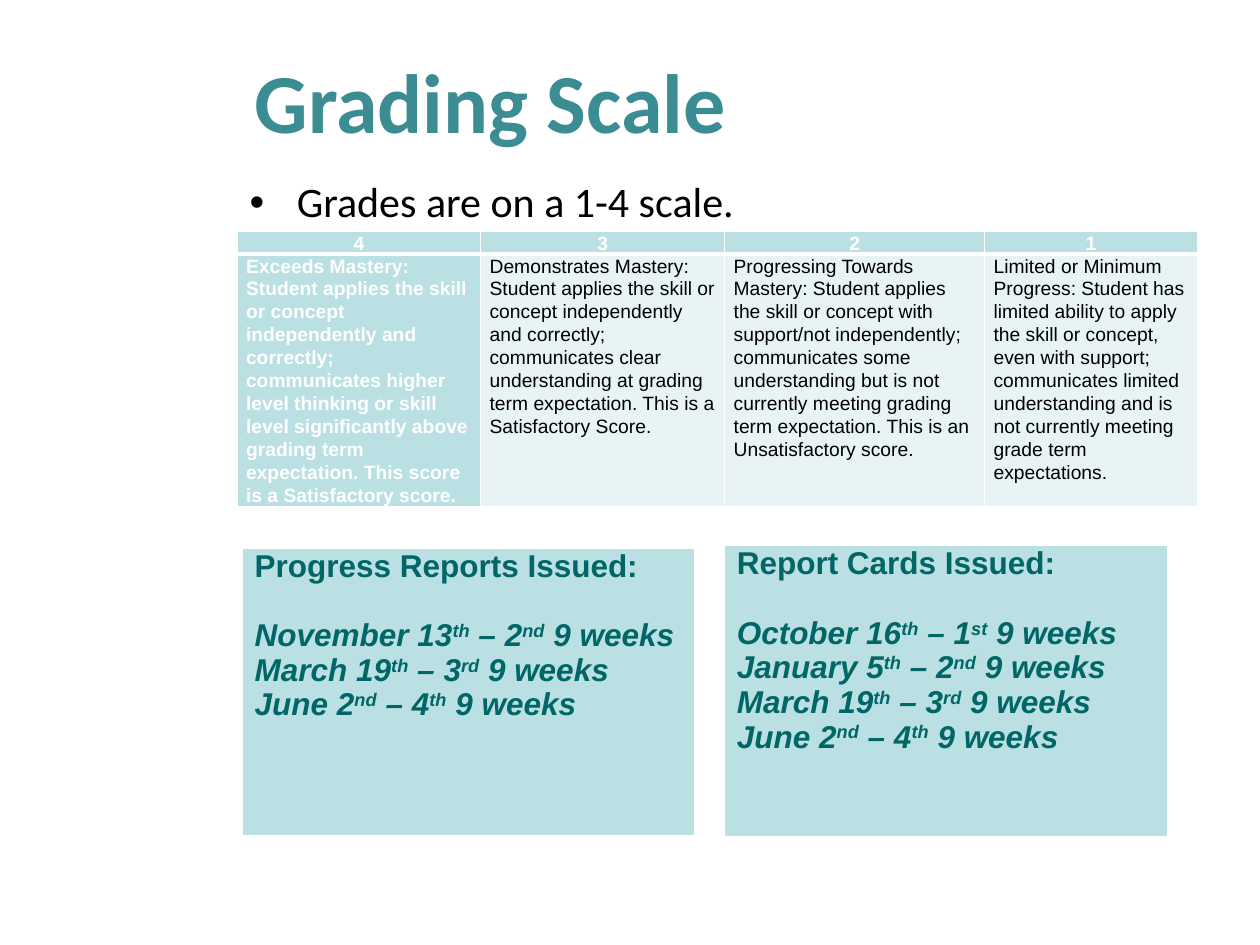
from lxml import etree
from pptx import Presentation
from pptx import util as u
from pptx.dml import color
from pptx.enum import text
from pptx.oxml import ns

WHITE, BLACK = "FFFFFF", "000000"
TEAL, PALE_TEAL, PALEST_TEAL = "3C8C93", "BBE0E3", "E7F3F4"
DARK_TEAL = "006666"

SCALE = [
    ("4", 4.91, "Exceeds Mastery: Student applies the skill or concept independently and "
     "correctly; communicates higher level thinking or skill level significantly above "
     "grading term expectation. This score is a Satisfactory score."),
    ("3", 4.92, "Demonstrates Mastery: Student applies the skill or concept independently and "
     "correctly; communicates clear understanding at grading term expectation. "
     "This is a Satisfactory Score."),
    ("2", 5.24, "Progressing Towards Mastery: Student applies the skill or concept with "
     "support/not independently; communicates some understanding but is not currently "
     "meeting grading term expectation. This is an Unsatisfactory score."),
    ("1", 4.29, "Limited or Minimum Progress: Student has limited ability to apply the skill "
     "or concept, even with support; communicates limited understanding and is not "
     "currently meeting grade term expectations."),
]
MARCH_AND_JUNE = ["March 19^th^ – 3^rd^ 9 weeks", "June 2^nd^ – 4^th^ 9 weeks"]
PROGRESS_DATES = ["November 13^th^ – 2^nd^ 9 weeks", *MARCH_AND_JUNE]
REPORT_DATES = ["October 16^th^ – 1^st^ 9 weeks", "January 5^th^ – 2^nd^ 9 weeks",
                *MARCH_AND_JUNE]


def rgb(hex_colour):
    return color.RGBColor.from_string(hex_colour)


def write(paragraph, words, size, colour, font="Arial", bold=False, italic=False,
          align=text.PP_ALIGN.LEFT, spacing=1.0, before=0):
    """Fill a paragraph; words between two ^ marks are superscript."""
    paragraph.alignment = align
    paragraph.line_spacing = spacing
    paragraph.space_before = u.Pt(before)
    for index, part in enumerate(words.split("^")):
        run = paragraph.add_run()
        run.text = part
        run.font.name, run.font.size = font, u.Pt(size)
        run.font.bold, run.font.italic = bold, italic
        run.font.color.rgb = rgb(colour)
        if index % 2:
            run.font._element.set("baseline", "30000")


def place(shape, left, top, width, height):
    shape.left, shape.top = u.Cm(left), u.Cm(top)
    shape.width, shape.height = u.Cm(width), u.Cm(height)


def add_plain_table(slide, left, top, widths, heights):
    table = slide.shapes.add_table(
        len(heights), len(widths), u.Cm(left), u.Cm(top),
        u.Cm(sum(widths)), u.Cm(sum(heights))).table
    table.first_row = table.horz_banding = False
    for column, width in zip(table.columns, widths):
        column.width = u.Cm(width)
    for row, height in zip(table.rows, heights):
        row.height = u.Cm(height)
    return table


def style_cell(cell, fill, bottom=1):
    """Give a cell white borders (bottom width in points) and a fill."""
    properties = cell._tc.get_or_add_tcPr()
    for side, points in (("L", 1), ("R", 1), ("T", 1), ("B", bottom)):
        line = etree.SubElement(properties, ns.qn(f"a:ln{side}"), w=str(u.Pt(points)))
        solid = etree.SubElement(line, ns.qn("a:solidFill"))
        etree.SubElement(solid, ns.qn("a:srgbClr"), val=WHITE)
    cell.fill.solid()
    cell.fill.fore_color.rgb = rgb(fill)


def fill_title(title):
    place(title, 4.88, 0.84, 19.48, 2.34)
    title.text_frame.vertical_anchor = text.MSO_ANCHOR.MIDDLE
    write(title.text_frame.paragraphs[0], "Grading Scale", 48, TEAL, "Calibri", bold=True)


def fill_body(body):
    place(body, 4.78, 3.53, 19.05, 12.7)
    body.text_frame.auto_size = text.MSO_AUTO_SIZE.NONE
    bullet = body.text_frame.paragraphs[0]
    indent = u.Cm(0.95)
    properties = bullet._p.get_or_add_pPr()
    properties.set("marL", str(indent))
    properties.set("indent", str(-indent))
    write(bullet, "Grades are on a 1-4 scale.", 24, BLACK, "Calibri", spacing=0.9)


def add_scale_table(slide):
    widths = [width for _, width, _ in SCALE]
    table = add_plain_table(slide, 4.78, 4.66, widths, [0.46, 5.06])
    for column, (grade, _, meaning) in enumerate(SCALE):
        header, description = table.cell(0, column), table.cell(1, column)
        for cell in (header, description):
            cell.margin_left = cell.margin_right = u.Cm(0.18)
            cell.margin_top = cell.margin_bottom = 0
        top_grade = column == 0
        style_cell(header, PALE_TEAL, bottom=3)
        style_cell(description, PALE_TEAL if top_grade else PALEST_TEAL)
        write(header.text_frame.paragraphs[0], grade, 11, WHITE, bold=True,
              align=text.PP_ALIGN.CENTER, spacing=1.07)
        write(description.text_frame.paragraphs[0], meaning, 11,
              WHITE if top_grade else BLACK, bold=top_grade, spacing=1.07)


def add_dates_panel(slide, heading, dates, left, top, width, height):
    cell = add_plain_table(slide, left, top, [width], [height]).cell(0, 0)
    style_cell(cell, PALE_TEAL, bottom=3)
    frame = cell.text_frame
    write(frame.paragraphs[0], heading, 18, DARK_TEAL, bold=True, spacing=0.8)
    for index, date in enumerate(dates):
        write(frame.add_paragraph(), date, 18, DARK_TEAL, bold=True, italic=True,
              spacing=0.8, before=3.6 if index else 23.8)


def main():
    deck = Presentation()
    deck.slide_width, deck.slide_height = u.Cm(25.4), u.Cm(19.05)
    slide = deck.slides.add_slide(deck.slide_layouts[1])
    fill_title(slide.shapes.title)
    fill_body(slide.placeholders[1])
    add_scale_table(slide)
    add_dates_panel(slide, "Progress Reports Issued:", PROGRESS_DATES, 4.88, 11.05, 9.12, 5.82)
    add_dates_panel(slide, "Report Cards Issued:", REPORT_DATES, 14.6, 11, 8.94, 5.89)
    deck.save("out.pptx")


if __name__ == "__main__":
    main()
